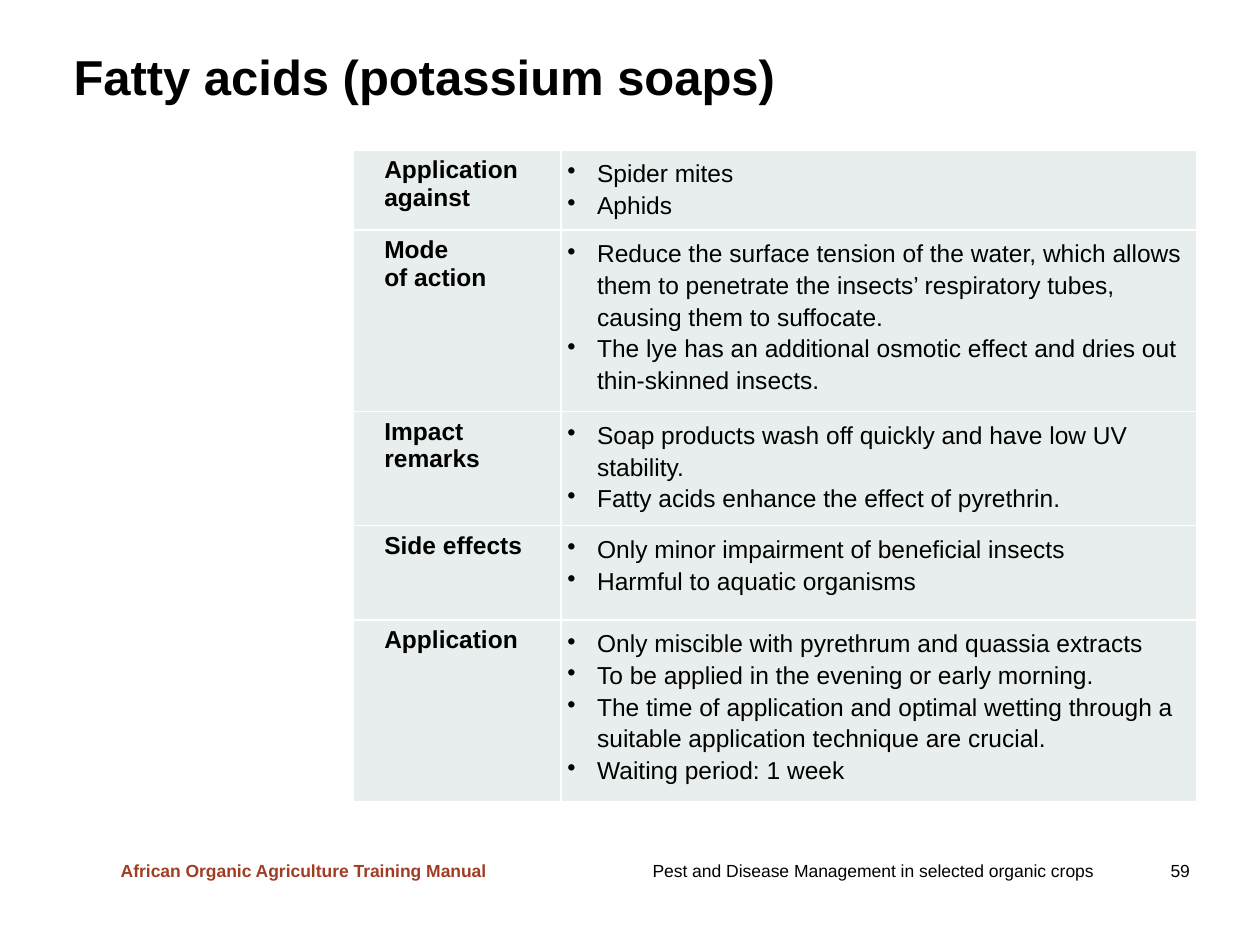
from pptx import Presentation
from pptx.dml.color import RGBColor as Rgb
from pptx.enum.text import MSO_ANCHOR as Anchor
from pptx.oxml import parse_xml
from pptx.oxml.ns import nsdecls
from pptx.util import Pt

COLORS = {"text": "000000", "accent": "A23D25", "cell": "E7EEED", "border": "FFFFFF"}
FONT = "Arial"
COLUMN_WIDTHS = (119, 363)
ROWS = [
    (43, "Application against", ["Spider mites", "Aphids"]),
    (97.5, "Mode\vof action", [
        "Reduce the surface tension of the water, which allows them to penetrate "
        "the insects’ respiratory tubes, causing them to suffocate.",
        "The lye has an additional osmotic effect and dries out thin-skinned insects.",
    ]),
    (61.5, "Impact remarks", [
        "Soap products wash off quickly and have low UV stability.",
        "Fatty acids enhance the effect of pyrethrin.",
    ]),
    (54, "Side effects", [
        "Only minor impairment of beneficial insects",
        "Harmful to aquatic organisms",
    ]),
    (97.5, "Application", [
        "Only miscible with pyrethrum and quassia extracts",
        "To be applied in the evening or early morning.",
        "The time of application and optimal wetting through a suitable "
        "application technique are crucial.",
        "Waiting period: 1 week",
    ]),
]


def format_runs(para, size, bold=False, color="text"):
    """Give every run of a paragraph the same font."""
    for span in para.runs:
        span.font.name = FONT
        span.font.size = Pt(size)
        span.font.bold = bold
        span.font.color.rgb = Rgb.from_string(COLORS[color])


def add_text(page, place, text, size, bold=False, color="text", wrap=True):
    """Add a vertically centred line of text and return its box."""
    box = page.shapes.add_textbox(*map(Pt, place))
    frame = box.text_frame
    frame.word_wrap = wrap
    frame.vertical_anchor = Anchor.MIDDLE
    frame.text = text
    format_runs(frame.paragraphs[0], size, bold, color)
    return box


def add_tab_stop(para, position):
    """Add a left tab stop to a paragraph."""
    para._p.get_or_add_pPr().append(parse_xml(
        f'<a:tabLst {nsdecls("a")}><a:tab pos="{Pt(position)}" algn="l"/></a:tabLst>'))


def indent(para, left, hanging=0):
    """Set the left margin and hanging indent of a paragraph."""
    properties = para._p.get_or_add_pPr()
    properties.set("marL", str(Pt(left)))
    properties.set("indent", str(-Pt(hanging)))


def style_cell(cell):
    """Set the margins, white borders and fill of a cell."""
    cell.margin_left = cell.margin_right = Pt(3.6)
    cell.margin_top = cell.margin_bottom = Pt(3.6)
    for side in "LRTB":
        cell._tc.get_or_add_tcPr().append(parse_xml(
            f'<a:ln{side} {nsdecls("a")} w="{Pt(1)}"><a:solidFill>'
            f'<a:srgbClr val="{COLORS["border"]}"/></a:solidFill></a:ln{side}>'))
    cell.fill.solid()
    cell.fill.fore_color.rgb = Rgb.from_string(COLORS["cell"])


def fill_label(cell, text):
    """Write a bold row label."""
    style_cell(cell)
    cell.text_frame.text = text
    para = cell.text_frame.paragraphs[0]
    indent(para, 14.4)
    para.space_after = Pt(3)
    format_runs(para, 14, bold=True)


def fill_bullets(cell, items):
    """Write a bulleted list into a cell."""
    style_cell(cell)
    cell.text_frame.text = "\n".join(items)
    for para in cell.text_frame.paragraphs:
        indent(para, 17, 17)
        para._p.get_or_add_pPr().append(parse_xml(f'<a:buChar {nsdecls("a")} char="•"/>'))
        para.line_spacing = 1.15
        format_runs(para, 14)


def add_facts_table(page, left, top):
    """Add the table of labels and bulleted facts."""
    width, height = sum(COLUMN_WIDTHS), sum(row[0] for row in ROWS)
    table = page.shapes.add_table(
        len(ROWS), len(COLUMN_WIDTHS), *map(Pt, (left, top, width, height))).table
    table.first_row = table.horz_banding = False
    for column, column_width in zip(table.columns, COLUMN_WIDTHS):
        column.width = Pt(column_width)
    for index, (row_height, label, items) in enumerate(ROWS):
        table.rows[index].height = Pt(row_height)
        fill_label(table.cell(index, 0), label)
        fill_bullets(table.cell(index, 1), items)


def main():
    """Build and save the slide."""
    deck = Presentation()
    deck.slide_width, deck.slide_height = Pt(720), Pt(540)
    page = deck.slides.add_slide(deck.slide_layouts[6])

    chapter = add_text(page, (365.8, 487.6, 348.5, 19.4),
                       "Pest and Disease Management in selected organic crops\t59", 10)
    add_tab_stop(chapter.text_frame.paragraphs[0], 296)
    add_text(page, (61.9, 487.6, 226, 19.4), "African Organic Agriculture Training Manual",
             10, bold=True, color="accent", wrap=False)

    title = add_text(page, (42, 18, 649.5, 54.7), "Fatty acids (potassium soaps)", 28, bold=True)
    title.text_frame.margin_left = title.text_frame.margin_top = 0

    add_facts_table(page, 201.6, 85.7)
    deck.save("out.pptx")


if __name__ == "__main__":
    main()
